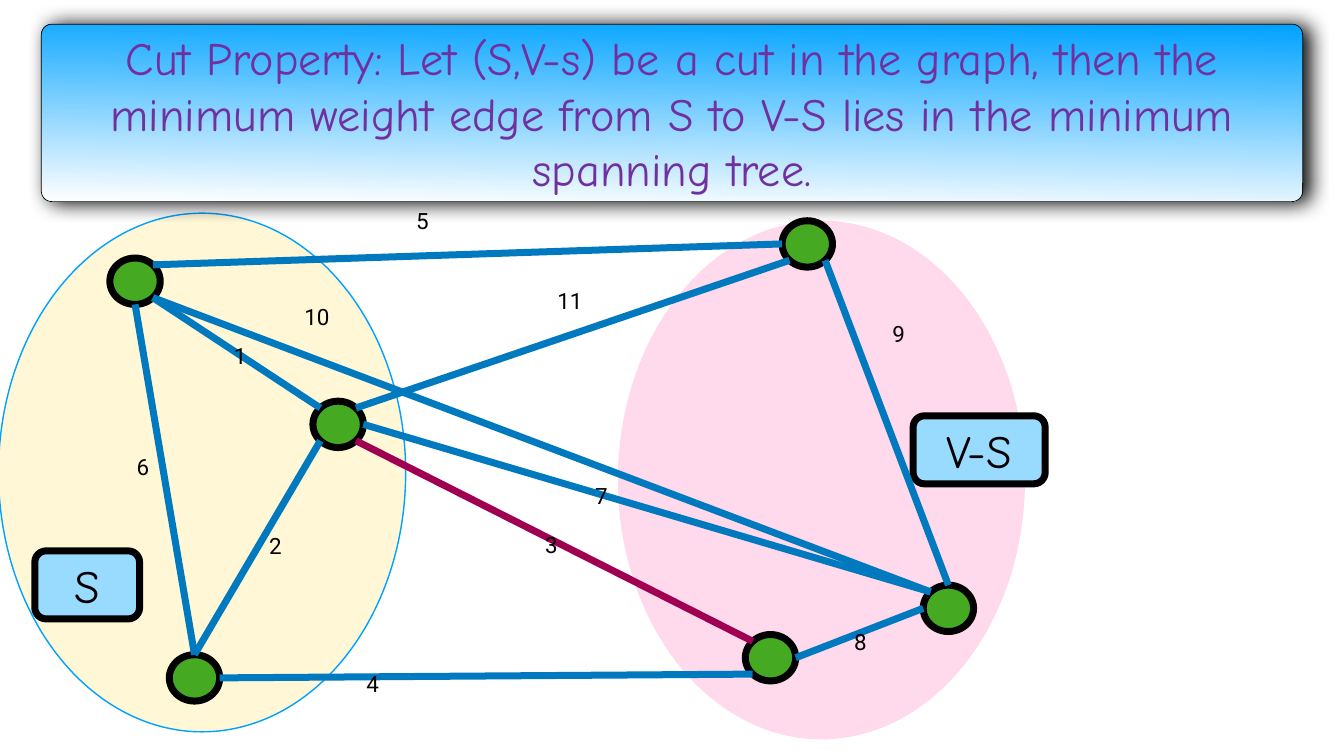
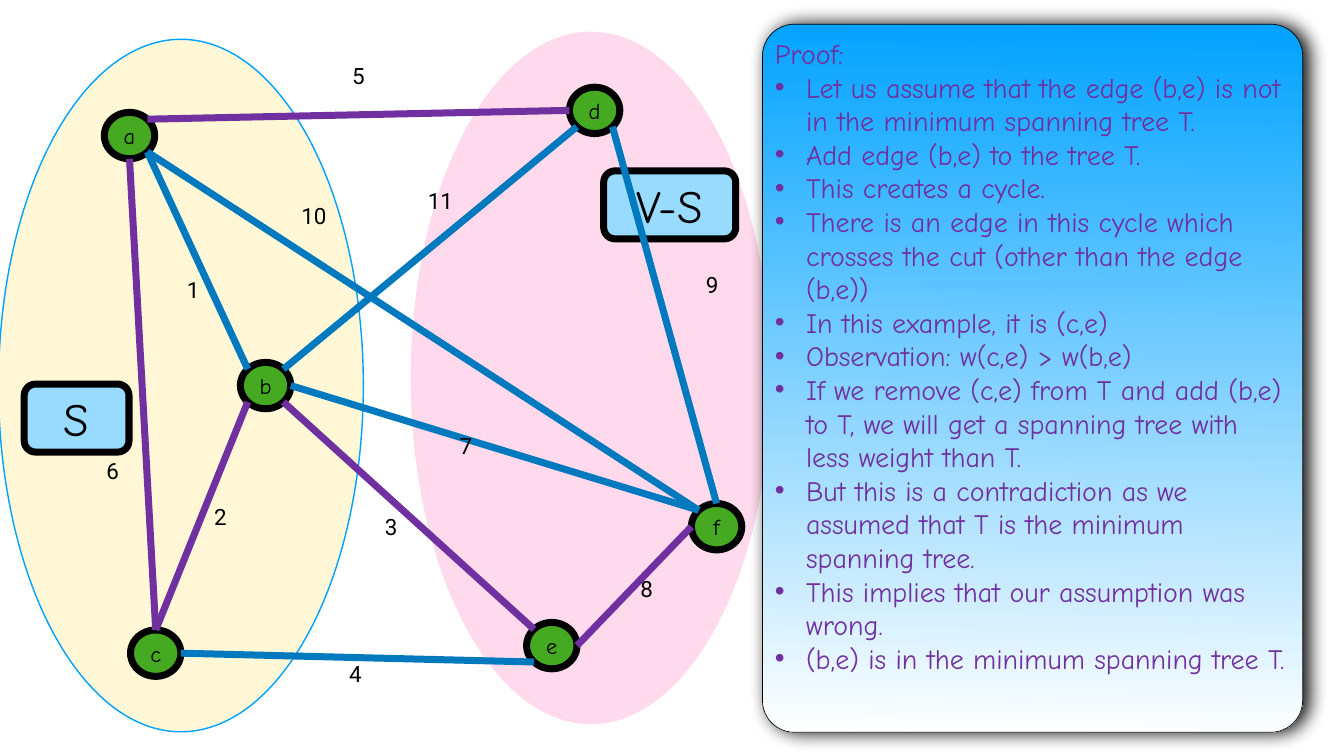
import math

import lxml.etree
import pptx
import pptx.dml.color
import pptx.enum.shapes
import pptx.enum.text
import pptx.oxml
import pptx.oxml.ns
import pptx.util

SHAPE = pptx.enum.shapes.MSO_SHAPE
ANCHOR = pptx.enum.text.MSO_ANCHOR
FIT = pptx.enum.text.MSO_AUTO_SIZE
ALIGN = pptx.enum.text.PP_ALIGN
qn = pptx.oxml.ns.qn

# All lengths below are columns and rows of a grid with one-inch cells.
CELL = pptx.util.Inches(1)
COLUMNS, ROWS = 26.67, 15
INSET = 0.06
CORNER = 0.059
NODE_SIZE = (1, 0.92)
TAG_HEIGHT = 1.35
LABEL_HEIGHT = 1.23
BULLET_INDENT = 0.62
THICK = 10

COLORS = {
    "ink": "000000",
    "sky": "00A2FF",
    "white": "FFFFFF",
    "purple": "7030A0",
    "edge": "0079BF",
    "lightest": "A00051",
    "node": "45AA21",
    "tag": "99DAFF",
    "inside": "FFF7D6",
    "outside": "FFD9EC",
}
HAND = "Comic Neue"
PLAIN = "Roboto"

# Directions on a node's rim, in eighths of a turn clockwise from the right.
E, SE, S, SW, W, NW, N, NE = range(8)

# weight: (start node, start side, end node, end side)
EDGES = {
    9: ("d", SE, "f", N),
    10: ("f", NW, "a", SE),
    11: ("d", SW, "b", NE),
    2: ("c", N, "b", SW),
    3: ("e", NW, "b", SE),
    8: ("f", W, "e", E),
    1: ("b", NW, "a", SE),
    5: ("d", W, "a", NE),
    6: ("c", N, "a", S),
    4: ("c", E, "e", SW),
    7: ("f", NW, "b", E),
}

CUT_PROPERTY = {
    "outside": (12.26, 4.38, 8.08, 10.29),
    "inside": (-0.03, 4.23, 8.08, 10.29),
    "panel": (0.82, 0.48, 25.03, 3.52),
    "tags": {"S": (0.69, 10.93, 2.08), "V-S": (18.12, 8.25, 2.62)},
    "nodes": {"a": (2.18, 5.12), "d": (15.52, 4.38), "b": (6.21, 7.96),
              "c": (3.36, 12.99), "e": (14.79, 12.59), "f": (18.32, 11.61)},
    "named": False,
    "highlight": {3: "lightest"},
    "weights": {6: (2.65, 8.68), 10: (5.98, 5.69), 9: (17.65, 6.03),
                1: (4.58, 6.48), 4: (7.21, 12.99), 3: (10.76, 10.22),
                7: (11.75, 9.25), 8: (16.89, 12.15), 5: (8.2, 3.79),
                2: (5.28, 10.25), 11: (11, 5.38)},
}
PROOF = {
    "outside": (8.15, 0.63, 7.15, 13.74),
    "inside": (-0.03, 0.78, 7.24, 13.74),
    "panel": (15.13, 0.48, 10.72, 14.05),
    "tags": {"S": (0.48, 7.62, 2.08), "V-S": (11.98, 3.39, 2.62)},
    "nodes": {"a": (2.07, 2.23), "d": (11.3, 1.73), "b": (4.77, 7.19),
              "c": (2.59, 12.5), "e": (10.45, 12.35), "f": (13.72, 9.99)},
    "named": True,
    "highlight": dict.fromkeys((2, 3, 5, 6, 8), "purple"),
    "weights": {6: (2.05, 8.76), 10: (5.92, 3.69), 9: (13.95, 5.06),
                1: (3.65, 5.16), 4: (6.87, 12.79), 3: (7.58, 9.86),
                7: (9.06, 8.25), 8: (12.65, 11.09), 5: (6.93, 0.91),
                2: (4.19, 9.67), 11: (8.43, 3.39)},
}
THEOREM = ("Cut Property: Let (S,V-s) be a cut in the graph, then the minimum "
           "weight edge from S to V-S lies in the minimum spanning tree.")
PROOF_STEPS = [
    "Let us assume that the edge (b,e) is not in the minimum spanning tree T.",
    "Add edge (b,e) to the tree T.",
    "This creates a cycle.",
    "There is an edge in this cycle which crosses the cut (other than the edge (b,e))",
    "In this example, it is (c,e)",
    "Observation: w(c,e) > w(b,e)",
    "If we remove (c,e) from T and add (b,e) to T, we will get a spanning tree "
    "with less weight than T.",
    "But this is a contradiction as we assumed that T is the minimum spanning tree.",
    "This implies that our assumption was wrong.",
    "(b,e) is in the minimum spanning tree T.",
]


def cells(*lengths):
    return [round(length * CELL) for length in lengths]


def rgb(name):
    return pptx.dml.color.RGBColor.from_string(COLORS[name])


def assign(target, values):
    for attribute, value in values.items():
        setattr(target, attribute, value)


def set_frame(frame, **changes):
    margins = dict.fromkeys(
        ("margin_left", "margin_right", "margin_top", "margin_bottom"),
        pptx.util.Inches(INSET))
    assign(frame, {**margins, "word_wrap": True,
                   "vertical_anchor": ANCHOR.MIDDLE,
                   "auto_size": FIT.SHAPE_TO_FIT_TEXT, **changes})


def write(paragraph, text, size, font=HAND, color="ink", **layout):
    run = paragraph.add_run()
    run.text = text
    assign(run.font, {"name": font, "size": pptx.util.Pt(size)})
    run.font.color.rgb = rgb(color)
    assign(paragraph, layout)


def add_figure(slide, kind, box, fill, line=None, width=THICK):
    figure = slide.shapes.add_shape(kind, *cells(*box))
    figure.shadow.inherit = False
    figure.fill.solid()
    figure.fill.fore_color.rgb = rgb(fill)
    if line:
        figure.line.color.rgb = rgb(line)
        figure.line.width = pptx.util.Pt(width)
    else:
        figure.line.fill.background()
    return figure


def add_panel(slide, box):
    """Rounded box fading from blue to white, with a soft shadow."""
    panel = add_figure(slide, SHAPE.ROUNDED_RECTANGLE, box, "sky", "ink", 1)
    panel.adjustments[0] = CORNER
    panel.fill.gradient()
    panel.fill.gradient_angle = 269
    for stop, color in zip(panel.fill.gradient_stops, ("sky", "white")):
        stop.color.rgb = rgb(color)
    effects = panel._element.spPr.find(qn("a:effectLst"))
    shadow = lxml.etree.SubElement(
        effects, qn("a:outerShdw"), blurRad=str(pptx.util.Pt(28)),
        dist=str(pptx.util.Pt(9)), dir="0", rotWithShape="0")
    tint = lxml.etree.SubElement(shadow, qn("a:srgbClr"), val=COLORS["ink"])
    lxml.etree.SubElement(tint, qn("a:alpha"), val="97000")


def place_on_panel(slide, placeholder, box, anchor):
    """Bring a placeholder to the front, inside the panel's round corners."""
    left, top, width, height = box
    pad = CORNER * min(width, height) * (1 - math.sqrt(0.5))
    places = cells(left + pad, top + pad, width - 2 * pad, height - 2 * pad)
    assign(placeholder, dict(zip(("left", "top", "width", "height"), places)))
    slide.shapes._spTree.append(placeholder._element)
    set_frame(placeholder.text_frame, vertical_anchor=anchor, auto_size=FIT.NONE)
    return placeholder.text_frame


def set_bullet(paragraph, indent, mark=None):
    properties = paragraph._p.get_or_add_pPr()
    properties.set("marL", str(cells(indent)[0]))
    properties.set("indent", str(cells(-indent)[0]))
    if mark:
        lxml.etree.SubElement(properties, qn("a:buChar"), char=mark)
    else:
        lxml.etree.SubElement(properties, qn("a:buNone"))


def add_regions(slide, scene):
    add_figure(slide, SHAPE.OVAL, scene["outside"], "outside")
    add_figure(slide, SHAPE.OVAL, scene["inside"], "inside", "sky", 2)


def add_tag(slide, name, left, top, width):
    tag = add_figure(slide, SHAPE.ROUNDED_RECTANGLE,
                     (left, top, width, TAG_HEIGHT), "tag", "ink")
    set_frame(tag.text_frame)
    write(tag.text_frame.paragraphs[0], name, 66, alignment=ALIGN.CENTER)


def add_node(slide, corner, name):
    node = add_figure(slide, SHAPE.OVAL, (*corner, *NODE_SIZE), "node", "ink")
    if name:
        set_frame(node.text_frame)
        write(node.text_frame.paragraphs[0], name, 32, alignment=ALIGN.CENTER)


def rim_point(corner, side):
    angle = side * math.pi / 4
    width, height = NODE_SIZE
    return cells(corner[0] + width / 2 * (1 + math.cos(angle)),
                 corner[1] + height / 2 * (1 + math.sin(angle)))


def add_edge(slide, start, end, color):
    edge = slide.shapes.add_connector(
        pptx.enum.shapes.MSO_CONNECTOR.STRAIGHT, *start, *end)
    edge.line.color.rgb = rgb(color)
    edge.line.width = pptx.util.Pt(THICK)
    lxml.etree.SubElement(edge._element.spPr, qn("a:effectLst"))


def add_weight(slide, weight, corner):
    width = 0.54 if weight < 10 else 0.7
    label = slide.shapes.add_textbox(*cells(*corner, width, LABEL_HEIGHT))
    set_frame(label.text_frame)
    write(label.text_frame.paragraphs[0], str(weight), 32, PLAIN,
          line_spacing=0.9, space_before=pptx.util.Pt(45))


def add_graph(slide, scene):
    nodes = scene["nodes"]
    for name, place in scene["tags"].items():
        add_tag(slide, name, *place)
    for name, corner in nodes.items():
        add_node(slide, corner, name if scene["named"] else None)
    for weight, (tail, tail_side, head, head_side) in EDGES.items():
        add_edge(slide, rim_point(nodes[tail], tail_side),
                 rim_point(nodes[head], head_side),
                 scene["highlight"].get(weight, "edge"))
    for weight, corner in scene["weights"].items():
        add_weight(slide, weight, corner)


def build_cut_property(deck):
    slide = deck.slides.add_slide(deck.slide_layouts[5])
    add_regions(slide, CUT_PROPERTY)
    add_panel(slide, CUT_PROPERTY["panel"])
    title = place_on_panel(slide, slide.shapes.title, CUT_PROPERTY["panel"],
                           ANCHOR.MIDDLE)
    write(title.paragraphs[0], THEOREM, 66, color="purple",
          alignment=ALIGN.CENTER)
    add_graph(slide, CUT_PROPERTY)


def build_proof(deck):
    slide = deck.slides.add_slide(deck.slide_layouts[1])
    unused_title = slide.shapes.title._element
    unused_title.getparent().remove(unused_title)
    add_regions(slide, PROOF)
    add_panel(slide, PROOF["panel"])
    steps = place_on_panel(slide, slide.placeholders[1], PROOF["panel"],
                           ANCHOR.TOP)
    flush = {"color": "purple", "space_before": pptx.util.Pt(0)}
    write(steps.paragraphs[0], "Proof:", 40, **flush)
    set_bullet(steps.paragraphs[0], 0)
    for step in PROOF_STEPS:
        paragraph = steps.add_paragraph()
        write(paragraph, step, 40, **flush)
        set_bullet(paragraph, BULLET_INDENT, "•")
    add_graph(slide, PROOF)


def main():
    deck = pptx.Presentation()
    deck.slide_width, deck.slide_height = cells(COLUMNS, ROWS)
    build_cut_property(deck)
    build_proof(deck)
    deck.save("out.pptx")


if __name__ == "__main__":
    main()
